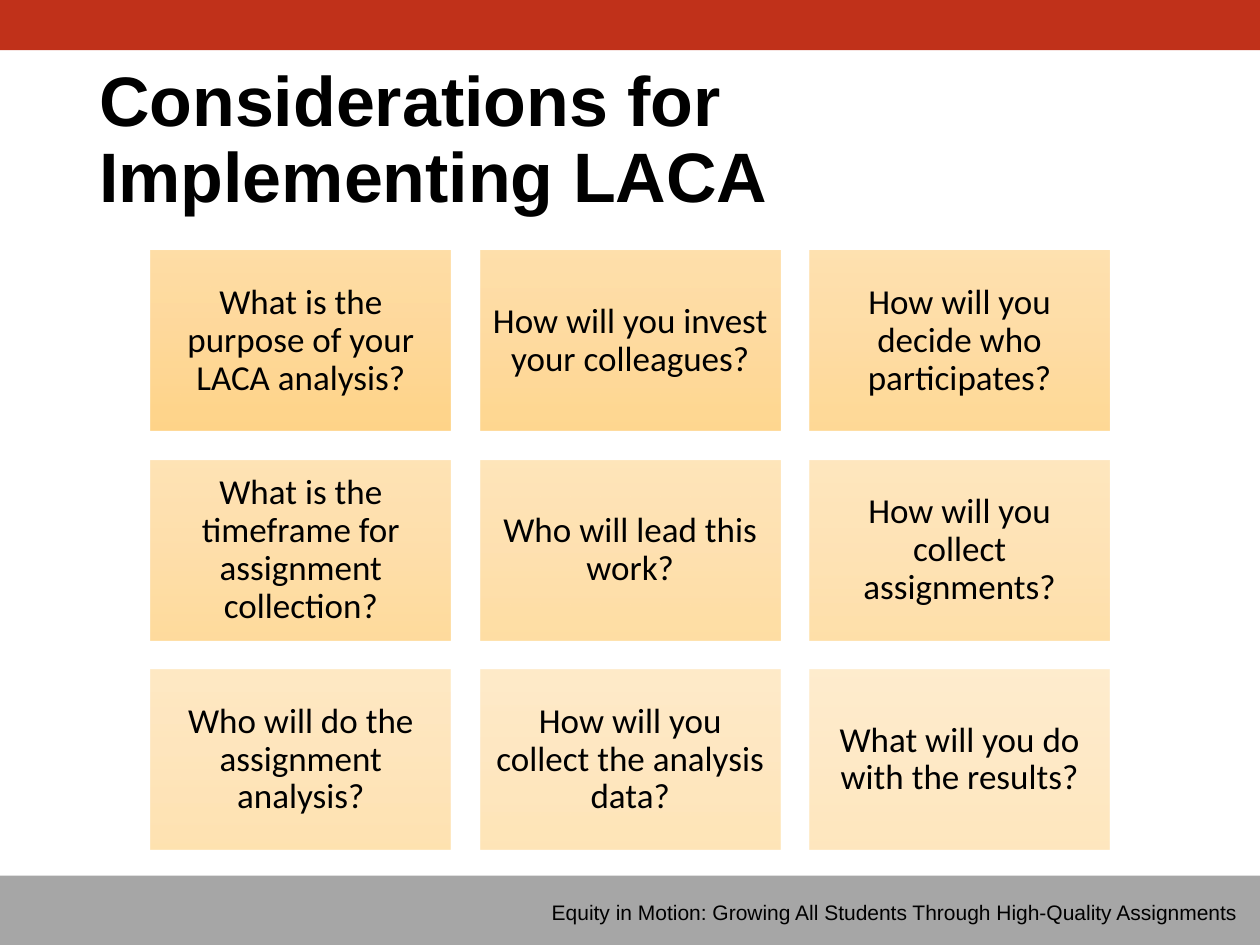
from pptx import Presentation
from pptx.dml.color import RGBColor
from pptx.enum.shapes import MSO_SHAPE as Shape
from pptx.enum.text import MSO_ANCHOR as Anchor, PP_ALIGN as Align
from pptx.oxml import parse_xml
from pptx.oxml.ns import nsdecls, qn
from pptx.util import Cm, Pt

COLORS = {
    "banner": "C0311A",
    "footer": "A6A6A6",
    "text": "000000",
    "card_top": "FFDB9E",
    "card_middle": "FFD590",
    "card_bottom": "FFD07C",
}

SLIDE_W, SLIDE_H = 25.4, 19.05

# Card grid, in centimetres
COLUMNS = 3
GRID_LEFT, GRID_TOP = 3.04, 5.06
CARD_W, CARD_H = 6.05, 3.63
GAP = 0.59
CARD_INSET = 0.2

QUESTIONS = [
    "What is the purpose of your LACA analysis?",
    "How will you invest your colleagues?",
    "How will you decide who participates?",
    "What is the timeframe for assignment collection?",
    "Who will lead this work?",
    "How will you collect assignments?",
    "Who will do the assignment analysis?",
    "How will you collect the analysis data?",
    "What will you do with the results?",
]


def add_rect(slide, left, top, width, height):
    rect = slide.shapes.add_shape(
        Shape.RECTANGLE, Cm(left), Cm(top), Cm(width), Cm(height))
    rect.shadow.inherit = False
    rect.line.fill.background()
    return rect


def add_bar(slide, top, height, color):
    bar = add_rect(slide, 0, top, SLIDE_W, height)
    bar.fill.solid()
    bar.fill.fore_color.rgb = RGBColor.from_string(COLORS[color])


def write(shape, text, font, size, align, bold=False, spacing=1.0):
    frame = shape.text_frame
    frame.word_wrap = True
    frame.vertical_anchor = Anchor.MIDDLE
    frame.text = text
    paragraph = frame.paragraphs[0]
    paragraph.alignment = align
    paragraph.line_spacing = spacing
    run_font = paragraph.runs[0].font
    run_font.name, run_font.size, run_font.bold = font, Pt(size), bold
    run_font.color.rgb = RGBColor.from_string(COLORS["text"])


def add_text(slide, left, top, width, height, text, *style, **options):
    box = slide.shapes.add_textbox(Cm(left), Cm(top), Cm(width), Cm(height))
    write(box, text, *style, **options)


def fill_gradient(shape, opacity):
    """Fill from top to bottom with three colours of equal opacity (percent)."""
    stops = "".join(
        f'<a:gs pos="{position * 1000}"><a:srgbClr val="{COLORS[color]}">'
        f'<a:alpha val="{opacity * 1000}"/></a:srgbClr></a:gs>'
        for position, color in
        [(0, "card_top"), (50, "card_middle"), (100, "card_bottom")])
    gradient = parse_xml(
        f'<a:gradFill {nsdecls("a")} rotWithShape="1"><a:gsLst>{stops}</a:gsLst>'
        '<a:lin ang="5400000" scaled="0"/></a:gradFill>')
    shape.fill.background()
    no_fill = shape.element.spPr.find(qn("a:noFill"))
    no_fill.getparent().replace(no_fill, gradient)


def add_card(slide, index, question):
    row, column = divmod(index, COLUMNS)
    card = add_rect(slide, GRID_LEFT + column * (CARD_W + GAP),
                    GRID_TOP + row * (CARD_H + GAP), CARD_W, CARD_H)
    fill_gradient(card, opacity=90 - 5 * index)
    frame = card.text_frame
    frame.margin_left = frame.margin_right = Cm(CARD_INSET)
    frame.margin_top = frame.margin_bottom = Cm(CARD_INSET)
    write(card, question, "Calibri", 20, Align.CENTER, spacing=0.9)


def main():
    prs = Presentation()
    prs.slide_width, prs.slide_height = Cm(SLIDE_W), Cm(SLIDE_H)
    slide = prs.slides.add_slide(prs.slide_layouts[6])

    # Footer and top banner
    add_bar(slide, 17.65, 1.4, "footer")
    add_bar(slide, 0, 1.01, "banner")
    add_text(slide, 10.49, 18.01, 14.71, 0.76,
             "Equity in Motion: Growing All Students Through "
             "High-Quality Assignments", "Arial", 12, Align.RIGHT)

    # Title
    add_text(slide, 1.75, 1.02, 21.89, 3.68,
             "Considerations for Implementing LACA",
             "Arial", 40, Align.LEFT, bold=True, spacing=0.9)

    # Question cards, fading from first to last
    for index, question in enumerate(QUESTIONS):
        add_card(slide, index, question)

    prs.save("out.pptx")


if __name__ == "__main__":
    main()
